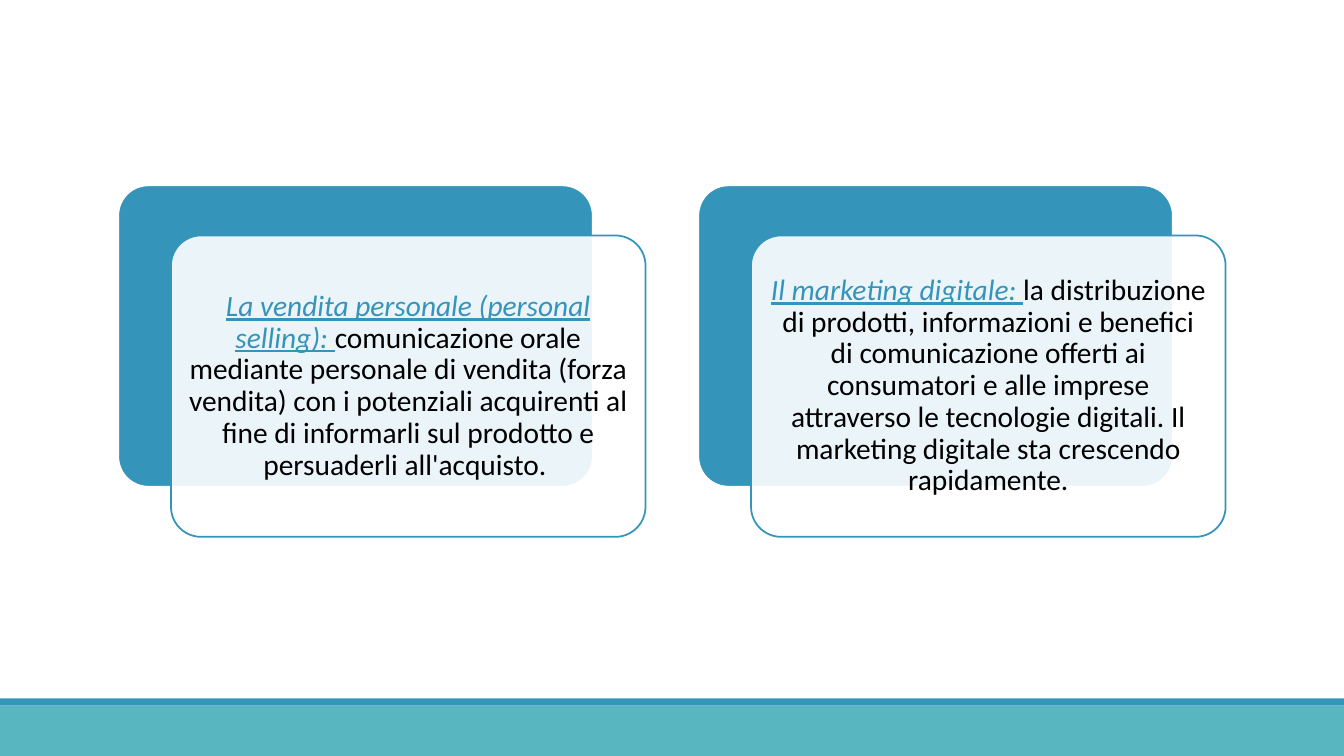
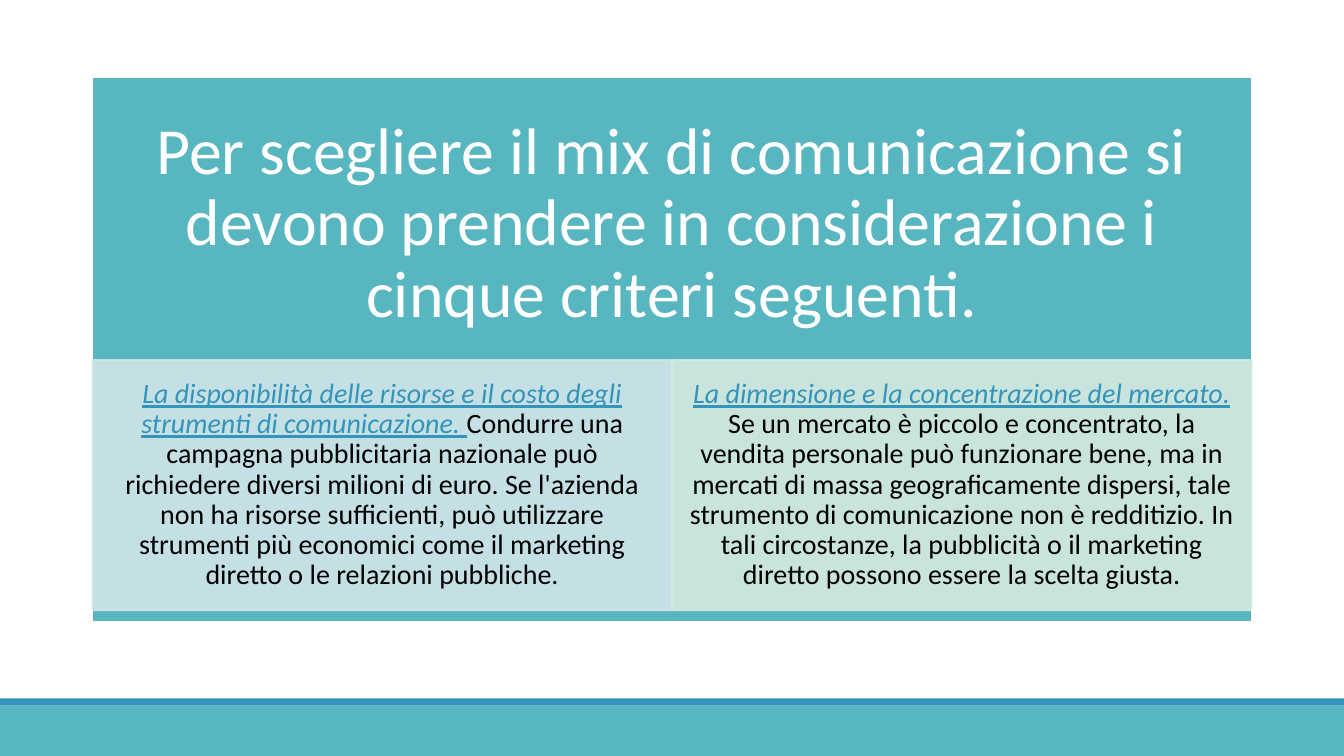
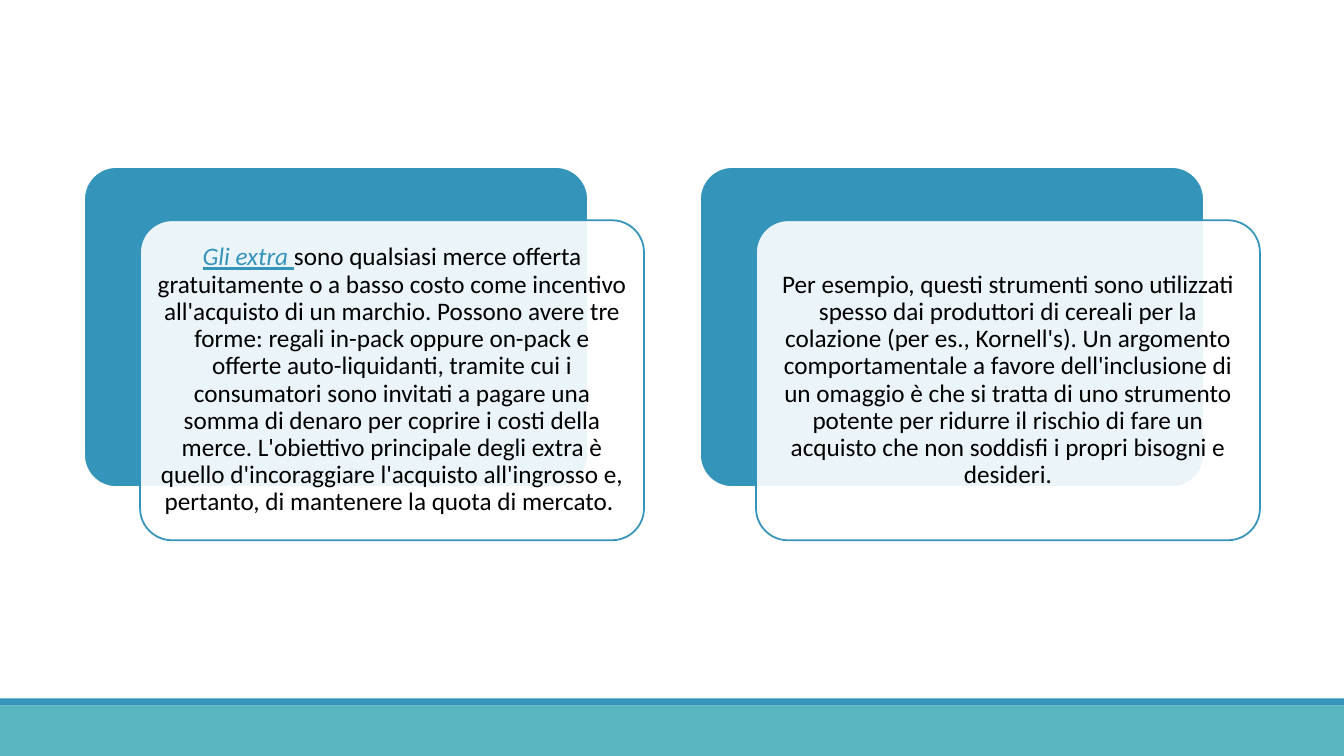
from dataclasses import dataclass

import pptx
import pptx.dml.color
import pptx.enum.shapes
import pptx.enum.text
import pptx.oxml
import pptx.oxml.ns
import pptx.presentation
import pptx.shapes.autoshape
import pptx.slide
import pptx.util
from pptx.util import Cm

SHAPE = pptx.enum.shapes.MSO_SHAPE


@dataclass(frozen=True)
class Theme:
    font: str = "Calibri"
    blue: str = "3494BA"
    teal: str = "58B6C0"
    pale_blue: str = "D1E5E8"
    pale_green: str = "D6E8E1"
    white: str = "FFFFFF"
    black: str = "000000"
    title_size: float = 47
    large_size: float = 21
    cell_size: float = 20
    small_size: float = 18
    outline: float = 1.25
    opacity: int = 90
    line_spacing: float = 0.9


THEME = Theme()


@dataclass(frozen=True)
class Box:
    """A rectangle in centimetres."""
    left: float
    top: float
    width: float
    height: float


@dataclass(frozen=True)
class Insets:
    """Text margins in centimetres."""
    side: float
    top: float
    bottom: float


@dataclass(frozen=True)
class Passage:
    """A highlighted opening followed by plain text."""
    lead: str
    body: str


@dataclass(frozen=True)
class CardPair:
    left: float
    top: float
    width: float
    inset: float
    size: float
    passages: tuple[Passage, ...]


SLIDE_SIZE = Box(0, 0, 33.87, 19.05)
PANEL = Box(2.33, 1.95, 29.21, 13.72)
HEADING_HEIGHT = 7.42
HEADING_INSET = 0.94
CELL_TOP = 9.07
CELL_HEIGHT = 6.31

BANDS = (
    (Box(0, 17.6, SLIDE_SIZE.width, 0.18), THEME.blue),
    (Box(0, 17.78, SLIDE_SIZE.width, 1.27), THEME.teal),
)

PROMOTION_TOOLS = CardPair(2.98, 4.67, 11.96, 0.23, THEME.large_size, (
    Passage(
        "La vendita personale (personal selling): ",
        "comunicazione orale mediante personale di vendita (forza vendita) con i "
        "potenziali acquirenti al fine di informarli sul prodotto e persuaderli "
        "all'acquisto. ",
    ),
    Passage(
        "Il marketing digitale: ",
        "la distribuzione di prodotti, informazioni e benefici di comunicazione "
        "offerti ai consumatori e alle imprese attraverso le tecnologie digitali. "
        "Il marketing digitale sta crescendo rapidamente.",
    ),
))

EXTRAS = CardPair(2.12, 4.21, 12.7, 0.2, THEME.small_size, (
    Passage(
        "Gli extra ",
        "sono qualsiasi merce offerta gratuitamente o a basso costo come incentivo "
        "all'acquisto di un marchio. Possono avere tre forme: regali in-pack oppure "
        "on-pack e offerte auto-liquidanti, tramite cui i consumatori sono invitati "
        "a pagare una somma di denaro per coprire i costi della merce. L'obiettivo "
        "principale degli extra è quello d'incoraggiare l'acquisto all'ingrosso e, "
        "pertanto, di mantenere la quota di mercato. ",
    ),
    Passage(
        "",
        "Per esempio, questi strumenti sono utilizzati spesso dai produttori di "
        "cereali per la colazione (per es., Kornell's). Un argomento comportamentale "
        "a favore dell'inclusione di un omaggio è che si tratta di uno strumento "
        "potente per ridurre il rischio di fare un acquisto che non soddisfi i "
        "propri bisogni e desideri.",
    ),
))

HEADING = Passage(
    "",
    "Per scegliere il mix di comunicazione si devono prendere in considerazione i "
    "cinque criteri seguenti.",
)

CRITERIA = (
    (THEME.pale_blue, Passage(
        "La disponibilità delle risorse e il costo degli strumenti di comunicazione. ",
        "Condurre una campagna pubblicitaria nazionale può richiedere diversi milioni "
        "di euro. Se l'azienda non ha risorse sufficienti, può utilizzare strumenti "
        "più economici come il marketing diretto o le relazioni pubbliche.",
    )),
    (THEME.pale_green, Passage(
        "La dimensione e la concentrazione del mercato. ",
        "Se un mercato è piccolo e concentrato, la vendita personale può funzionare "
        "bene, ma in mercati di massa geograficamente dispersi, tale strumento di "
        "comunicazione non è redditizio. In tali circostanze, la pubblicità o il "
        "marketing diretto possono essere la scelta giusta.",
    )),
)


def rgb(colour: str) -> pptx.dml.color.RGBColor:
    return pptx.dml.color.RGBColor.from_string(colour)


def set_opacity(shape: pptx.shapes.autoshape.Shape) -> None:
    """Make every colour set so far on the shape slightly transparent."""
    for colour in shape.element.spPr.iter(pptx.oxml.ns.qn("a:srgbClr")):
        alpha = pptx.oxml.parse_xml(f"<a:alpha {pptx.oxml.ns.nsdecls('a')}/>")
        alpha.set("val", str(THEME.opacity * 1000))
        colour.append(alpha)


def set_fill(shape: pptx.shapes.autoshape.Shape, colour: str) -> None:
    shape.fill.solid()
    shape.fill.fore_color.rgb = rgb(colour)


def set_outline(shape: pptx.shapes.autoshape.Shape, colour: str) -> None:
    shape.line.color.rgb = rgb(colour)
    shape.line.width = pptx.util.Pt(THEME.outline)


def add_block(slide: pptx.slide.Slide, box: Box, fill: str,
              preset: SHAPE = SHAPE.RECTANGLE) -> pptx.shapes.autoshape.Shape:
    """Add a filled shape without shadow or outline."""
    shape = slide.shapes.add_shape(
        preset, Cm(box.left), Cm(box.top), Cm(box.width), Cm(box.height))
    shape.shadow.inherit = False
    set_fill(shape, fill)
    shape.line.fill.background()
    if preset == SHAPE.ROUNDED_RECTANGLE:
        shape.adjustments[0] = 0.1
    return shape


def write_passage(shape: pptx.shapes.autoshape.Shape, passage: Passage,
                  size: float, colour: str, insets: Insets) -> None:
    """Write centred text, with the lead in blue, italic and underlined."""
    frame = shape.text_frame
    frame.word_wrap = True
    frame.auto_size = pptx.enum.text.MSO_AUTO_SIZE.NONE
    frame.vertical_anchor = pptx.enum.text.MSO_ANCHOR.MIDDLE
    frame.margin_left = frame.margin_right = Cm(insets.side)
    frame.margin_top, frame.margin_bottom = Cm(insets.top), Cm(insets.bottom)
    paragraph = frame.paragraphs[0]
    paragraph.alignment = pptx.enum.text.PP_ALIGN.CENTER
    paragraph.line_spacing = THEME.line_spacing
    for text, is_lead in ((passage.lead, True), (passage.body, False)):
        if not text:
            continue
        run = paragraph.add_run()
        run.text = text
        run.font.name = THEME.font
        run.font.size = pptx.util.Pt(size)
        run.font.color.rgb = rgb(THEME.blue if is_lead else colour)
        run.font.italic = run.font.underline = is_lead


def add_master_bands(presentation: pptx.presentation.Presentation,
                     slide: pptx.slide.Slide) -> None:
    """Draw the bottom bands and move them behind the master's placeholders."""
    master_tree = presentation.slide_master.element.cSld.spTree
    for number, (box, colour) in enumerate(BANDS):
        band = add_block(slide, box, colour)
        band.element.nvSpPr.cNvPr.set("id", str(100 + number))
        master_tree.insert(2 + number, band.element)


def add_card_pair(slide: pptx.slide.Slide, pair: CardPair) -> None:
    """Draw two cards, each over a blue one; all measures follow the card width."""
    height = pair.width * 0.635
    pitch = pair.width * 11 / 9
    shift_right, shift_down = pair.width / 9, pair.width * 0.1056
    for column, passage in enumerate(pair.passages):
        left = pair.left + column * pitch
        back = add_block(slide, Box(left, pair.top, pair.width, height),
                         THEME.blue, SHAPE.ROUNDED_RECTANGLE)
        set_outline(back, THEME.white)
        front_box = Box(left + shift_right, pair.top + shift_down, pair.width, height)
        front = add_block(slide, front_box, THEME.white, SHAPE.ROUNDED_RECTANGLE)
        set_opacity(front)
        set_outline(front, THEME.blue)
        write_passage(front, passage, pair.size, THEME.black,
                      Insets(pair.inset, pair.inset, pair.inset))


def add_criteria(slide: pptx.slide.Slide) -> None:
    """Use the title as the teal panel and lay the criteria cells over it."""
    title = slide.shapes.title
    title.left, title.top = Cm(PANEL.left), Cm(PANEL.top)
    title.width, title.height = Cm(PANEL.width), Cm(PANEL.height)
    set_fill(title, THEME.teal)
    set_outline(title, THEME.white)
    below_heading = PANEL.height - HEADING_HEIGHT
    write_passage(title, HEADING, THEME.title_size, THEME.white,
                  Insets(HEADING_INSET, HEADING_INSET, HEADING_INSET + below_heading))

    cell_width = PANEL.width / len(CRITERIA)
    for column, (colour, passage) in enumerate(CRITERIA):
        box = Box(PANEL.left + column * cell_width, CELL_TOP, cell_width, CELL_HEIGHT)
        cell = add_block(slide, box, colour)
        set_outline(cell, colour)
        set_opacity(cell)
        write_passage(cell, passage, THEME.cell_size, THEME.black,
                      Insets(0.41, 0.08, 0.08))


def main() -> None:
    presentation = pptx.Presentation()
    presentation.slide_width = Cm(SLIDE_SIZE.width)
    presentation.slide_height = Cm(SLIDE_SIZE.height)
    title_only, blank = presentation.slide_layouts[5], presentation.slide_layouts[6]

    tools_slide = presentation.slides.add_slide(blank)
    add_master_bands(presentation, tools_slide)
    add_card_pair(tools_slide, PROMOTION_TOOLS)
    add_criteria(presentation.slides.add_slide(title_only))
    add_card_pair(presentation.slides.add_slide(blank), EXTRAS)
    presentation.save("out.pptx")


if __name__ == "__main__":
    main()
